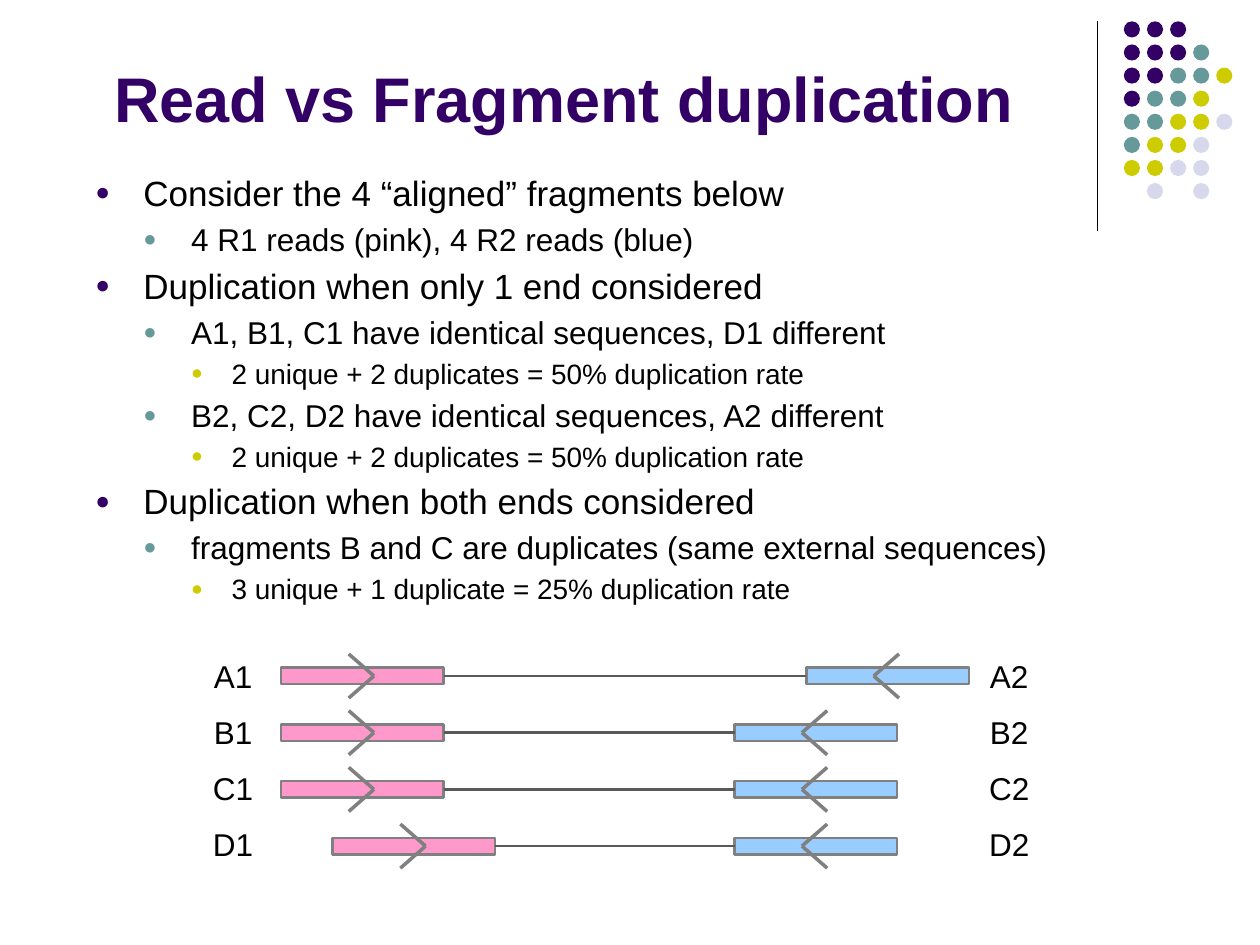
"""Build the slide comparing read duplication with fragment duplication."""
from dataclasses import dataclass

from lxml import etree
from pptx import Presentation
from pptx import util as u
from pptx.dml.color import RGBColor
from pptx.enum import shapes, text
from pptx.oxml.ns import qn

Pt = u.Pt
PURPLE, TEAL, OLIVE, LILAC = "330066", "669999", "CCCC00", "D8D8EC"
PINK, BLUE, GREY, DARK, BLACK = "FF99CC", "99CCFF", "808080", "595959", "000000"

DOTS = ("PPP", "PPPT", "PPTTY", "PTTY", "TTYYL", "TYYL", "YYLL", " L L")
DOT_COLORS = {"P": PURPLE, "T": TEAL, "Y": OLIVE, "L": LILAC}
DOT_LEFT, DOT_TOP, DOT_PITCH, DOT_SIZE = 642.2, 12.2, 13.2, 9.2

READ_TOP, READ_PITCH, READ_W, READ_H = 381.6, 32.4, 92.9, 9.4
LABEL_TOP, LABEL_PITCH, LABEL_W, LABEL_H = 372, 32, 43.2, 29
CHEVRON_W, CHEVRON_H = 14.4, 25.2


@dataclass
class Level:
    size: float
    indent: float
    hanging: float
    bullet: str


@dataclass
class Bullet:
    level: int
    words: str


@dataclass
class Fragment:
    name: str
    left1: float
    left2: float


LEVELS = (Level(20, 27.36, 27.36, PURPLE), Level(18, 54.72, 27.36, TEAL), Level(16, 77.76, 23.04, OLIVE))
BULLETS = (
    Bullet(0, "Consider the 4 “aligned” fragments below"),
    Bullet(1, "4 R1 reads (pink), 4 R2 reads (blue)"),
    Bullet(0, "Duplication when only 1 end considered"),
    Bullet(1, "A1, B1, C1 have identical sequences, D1 different"),
    Bullet(2, "2 unique + 2 duplicates = 50% duplication rate"),
    Bullet(1, "B2, C2, D2 have identical sequences, A2 different"),
    Bullet(2, "2 unique + 2 duplicates = 50% duplication rate"),
    Bullet(0, "Duplication when both ends considered"),
    Bullet(1, "fragments B and C are duplicates (same external sequences)"),
    Bullet(2, "3 unique + 1 duplicate = 25% duplication rate"),
)
FRAGMENTS = (
    Fragment("A", 160.6, 460.8),
    Fragment("B", 160.6, 419.8),
    Fragment("C", 160.6, 419.8),
    Fragment("D", 190.1, 419.8),
)


def rgb(value: str) -> RGBColor:
    return RGBColor.from_string(value)


def add_line(s, x1: float, y1: float, x2: float, y2: float, color: str, width: float):
    line = s.shapes.add_connector(shapes.MSO_CONNECTOR.STRAIGHT, Pt(x1), Pt(y1), Pt(x2), Pt(y2))
    line.line.color.rgb = rgb(color)
    line.line.width = Pt(width)
    etree.SubElement(line._element.spPr, qn("a:effectLst"))
    return line


def add_solid(s, kind, x: float, y: float, w: float, h: float, fill: str, outline: str = ""):
    sp = s.shapes.add_shape(kind, Pt(x), Pt(y), Pt(w), Pt(h))
    sp.shadow.inherit = False
    sp.fill.solid()
    sp.fill.fore_color.rgb = rgb(fill)
    if outline:
        sp.line.color.rgb = rgb(outline)
        sp.line.width = Pt(1.5)
    else:
        sp.line.fill.background()
    return sp


def add_frame(s, x: float, y: float, w: float, h: float):
    tf = s.shapes.add_textbox(Pt(x), Pt(y), Pt(w), Pt(h)).text_frame
    tf.word_wrap = True
    return tf


def set_text(p, words: str, size: float, color: str = BLACK, bold: bool = False) -> None:
    p.text = words
    p.font.name = "Arial"
    p.font.size = Pt(size)
    p.font.bold = bold
    p.font.color.rgb = rgb(color)


def set_bullet(p, level: Level) -> None:
    pPr = p._p.get_or_add_pPr()
    pPr.set("marL", str(Pt(level.indent)))
    pPr.set("indent", str(-Pt(level.hanging)))
    parts = (
        ("a:spcBef", {}, ("a:spcPct", {"val": "20000"})),
        ("a:buClr", {}, ("a:srgbClr", {"val": level.bullet})),
        ("a:buSzPct", {"val": "70000"}, None),
        ("a:buFont", {"typeface": "Arial"}, None),
        ("a:buChar", {"char": "●"}, None),
    )
    for i, (tag, attributes, child) in enumerate(parts):
        element = etree.Element(qn(tag), attributes)
        if child:
            etree.SubElement(element, qn(child[0]), child[1])
        pPr.insert(i, element)


def add_bullets(s) -> None:
    tf = add_frame(s, 47.5, 94.3, 638.6, 277.2)
    for i, item in enumerate(BULLETS):
        p = tf.add_paragraph() if i else tf.paragraphs[0]
        level = LEVELS[item.level]
        set_text(p, item.words, level.size)
        p.level = item.level
        set_bullet(p, level)


def add_dots(s) -> None:
    for row, codes in enumerate(DOTS):
        for col, code in enumerate(codes):
            if code in DOT_COLORS:
                add_solid(s, shapes.MSO_SHAPE.OVAL, DOT_LEFT + col * DOT_PITCH, DOT_TOP + row * DOT_PITCH,
                          DOT_SIZE, DOT_SIZE, DOT_COLORS[code])


def add_chevron(s, tail: float, tip: float, middle: float) -> None:
    for side in (-1, 1):
        add_line(s, tail, middle + side * CHEVRON_H / 2, tip, middle, GREY, 2)


def add_fragment(s, row: int, fragment: Fragment) -> None:
    top = READ_TOP + row * READ_PITCH
    middle = top + READ_H / 2
    read1, read2 = (
        add_solid(s, shapes.MSO_SHAPE.RECTANGLE, left, top, READ_W, READ_H, fill, GREY)
        for left, fill in ((fragment.left1, PINK), (fragment.left2, BLUE))
    )
    link = add_line(s, fragment.left1 + READ_W, middle, fragment.left2, middle, DARK, 1.5)
    link.begin_connect(read1, 3)
    link.end_connect(read2, 1)
    tail1, tip2 = fragment.left1 + 38.7, fragment.left2 + 38.5
    add_chevron(s, tail1, tail1 + CHEVRON_W, middle)
    add_chevron(s, tip2 + CHEVRON_W, tip2, middle)
    for end, left in ((1, 111.6), (2, 555.1)):
        p = add_frame(s, left, LABEL_TOP + row * LABEL_PITCH, LABEL_W, LABEL_H).paragraphs[0]
        set_text(p, f"{fragment.name}{end}", 18)
        p.alignment = text.PP_ALIGN.CENTER


def main() -> None:
    prs = Presentation()
    prs.slide_width, prs.slide_height = Pt(720), Pt(540)
    s = prs.slides.add_slide(prs.slide_layouts[6])
    add_line(s, 627.1, 12.2, 627.1, 131.8, BLACK, 0.75)
    add_dots(s)
    tf = add_frame(s, 25.2, 3.6, 594, 77)
    tf.vertical_anchor = text.MSO_ANCHOR.BOTTOM
    set_text(tf.paragraphs[0], "Read vs Fragment duplication", 36, PURPLE, True)
    tf.paragraphs[0].alignment = text.PP_ALIGN.CENTER
    add_bullets(s)
    for row, fragment in enumerate(FRAGMENTS):
        add_fragment(s, row, fragment)
    prs.save("out.pptx")


if __name__ == "__main__":
    main()
